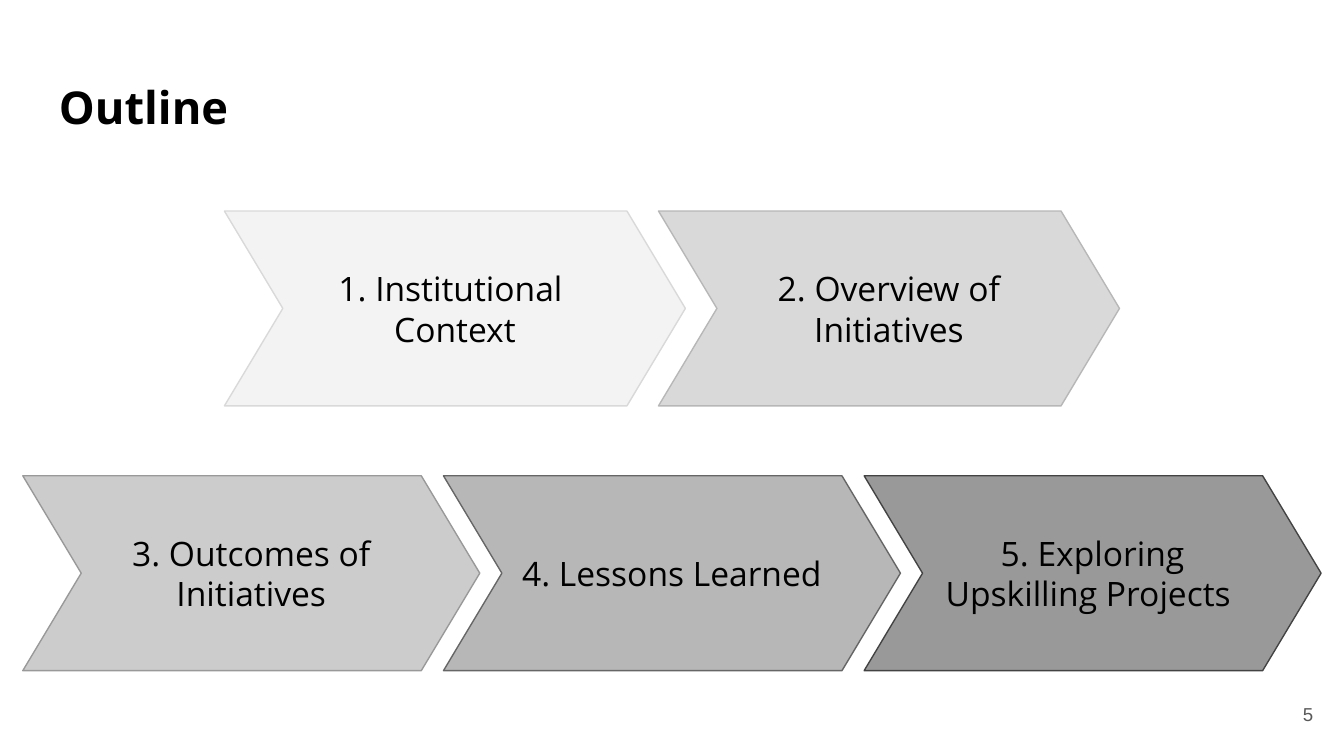
"""Build the outline slide with five chevron steps in two rows."""
from pptx import Presentation
from pptx.dml.color import RGBColor
from pptx.enum.shapes import MSO_SHAPE
from pptx.enum.text import MSO_ANCHOR, PP_ALIGN
from pptx.util import Inches, Pt

CHEVRON = MSO_SHAPE.CHEVRON
TOP, MIDDLE = MSO_ANCHOR.TOP, MSO_ANCHOR.MIDDLE
LEFT, CENTER, RIGHT = PP_ALIGN.LEFT, PP_ALIGN.CENTER, PP_ALIGN.RIGHT

BLACK = RGBColor(0x00, 0x00, 0x00)
CHARCOAL = RGBColor(0x43, 0x43, 0x43)
SLATE = RGBColor(0x59, 0x59, 0x59)
DIM = RGBColor(0x66, 0x66, 0x66)
GRAY = RGBColor(0x99, 0x99, 0x99)
SILVER = RGBColor(0xB7, 0xB7, 0xB7)
LIGHT = RGBColor(0xCC, 0xCC, 0xCC)
PALE = RGBColor(0xD9, 0xD9, 0xD9)
MIST = RGBColor(0xF3, 0xF3, 0xF3)


def write(shape, lines, size, align, anchor=MIDDLE, font="Open Sans", color=BLACK, bold=False):
    frame = shape.text_frame
    frame.word_wrap = True
    frame.vertical_anchor = anchor
    frame.margin_left = frame.margin_right = Inches(0.1)
    frame.margin_top = frame.margin_bottom = Inches(0.1)
    for index, line in enumerate(lines):
        paragraph = frame.add_paragraph() if index else frame.paragraphs[0]
        paragraph.alignment = align
        run = paragraph.add_run()
        run.text = line
        run.font.name = font
        run.font.size = Pt(size)
        run.font.bold = bold
        run.font.color.rgb = color


prs = Presentation()
prs.slide_width = Inches(10)
prs.slide_height = Inches(10) * 9 // 16
slide = prs.slides.add_slide(prs.slide_layouts[6])

title = slide.shapes.add_textbox(Inches(0.34), Inches(0.49), Inches(9.32), Inches(0.63))
write(title, ["Outline"], 24.2, LEFT, anchor=TOP, bold=True)

rows = [
    (1.67, 1.57, 3.43, 3.23, [
        (["1. Institutional ", "Context"], MIST, PALE),
        (["2. Overview of Initiatives"], PALE, SILVER),
    ]),
    (0.17, 3.54, 3.4, 3.13, [
        (["3. Outcomes of Initiatives"], LIGHT, GRAY),
        (["4. Lessons Learned"], SILVER, DIM),
        (["5. Exploring Upskilling Projects "], GRAY, CHARCOAL),
    ]),
]
for left, top, width, pitch, steps in rows:
    for column, (lines, fill, outline) in enumerate(steps):
        step = slide.shapes.add_shape(
            CHEVRON, Inches(left + column * pitch), Inches(top), Inches(width), Inches(1.45))
        step.adjustments[0] = 0.3
        step.shadow.inherit = False
        step.fill.solid()
        step.fill.fore_color.rgb = fill
        step.line.color.rgb = outline
        step.line.width = Pt(0.75)
        write(step, lines, 18, CENTER)

page_number = slide.shapes.add_textbox(Inches(9.27), Inches(5.1), Inches(0.6), Inches(0.43))
write(page_number, ["5"], 10, RIGHT, font="Arial", color=SLATE)

prs.save("out.pptx")
